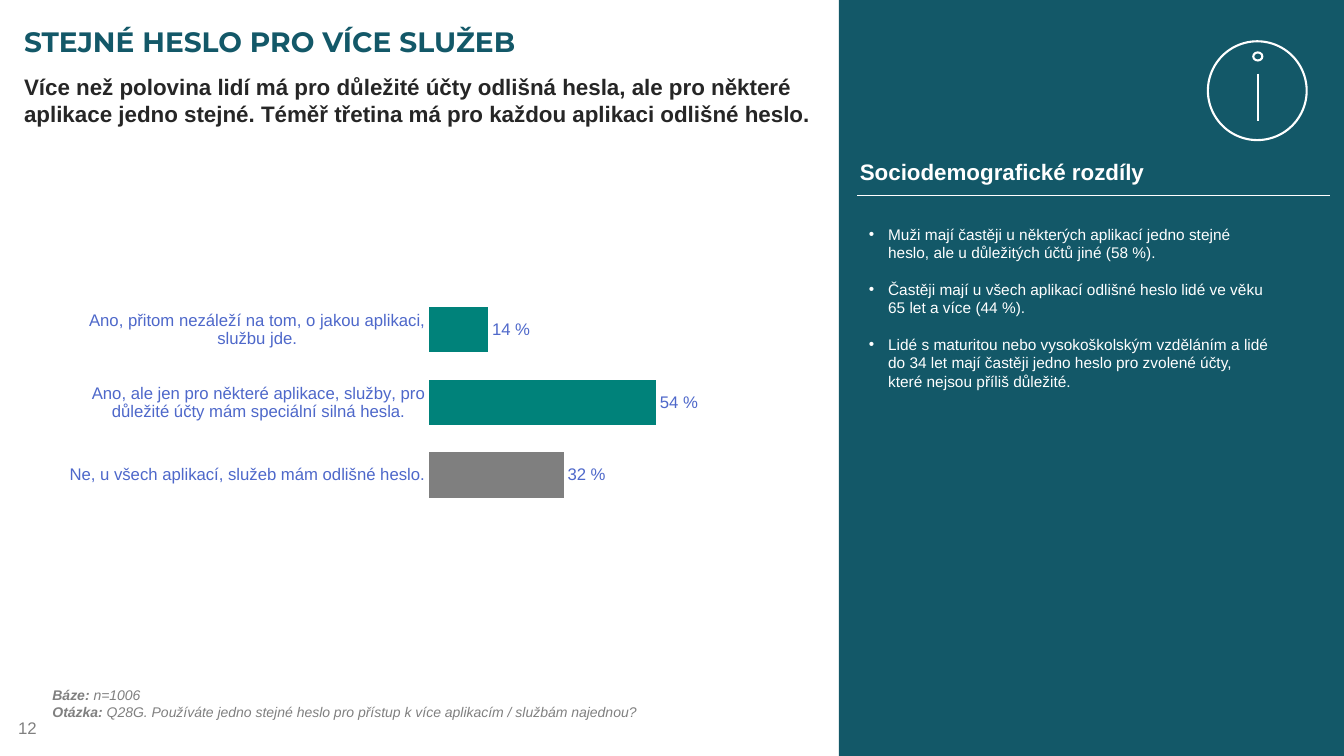
from dataclasses import dataclass
from typing import Any

from lxml.etree import SubElement
from pptx import Presentation
from pptx.chart.data import CategoryChartData
from pptx.dml.color import RGBColor
from pptx.enum.chart import XL_CHART_TYPE, XL_LABEL_POSITION, XL_TICK_MARK
from pptx.enum.shapes import MSO_CONNECTOR, MSO_SHAPE
from pptx.enum.text import MSO_ANCHOR
from pptx.oxml import parse_xml
from pptx.oxml.ns import nsdecls, qn
from pptx.util import Inches, Pt


@dataclass(frozen=True)
class Theme:
    teal: str = "135868"
    white: str = "FFFFFF"
    ink: str = "262626"
    grey: str = "808080"
    label: str = "4E68CA"
    bar: str = "00827A"
    bar_no: str = "7F7F7F"
    body_font: str = "Arial"
    title_font: str = "Montserrat"
    title: int = 20
    heading: int = 16
    small: int = 12
    bullet: int = 11
    note: int = 10


T = Theme()
Box = tuple[float, float, float, float]


@dataclass(frozen=True)
class Run:
    text: str
    bold: bool = False


@dataclass(frozen=True)
class TextBox:
    box: Box
    paragraphs: list[list[Run]]
    size: int
    color: str
    font: str = T.body_font
    italic: bool = False
    wrap: bool = True
    anchor: MSO_ANCHOR = MSO_ANCHOR.TOP
    inset: tuple[float, float] = (0.1, 0.05)
    bullet: bool = False
    gap: int = 0


@dataclass(frozen=True)
class Shape:
    kind: MSO_SHAPE
    box: Box
    fill: str | None = None
    line: str | None = None


@dataclass(frozen=True)
class Line:
    start: tuple[float, float]
    end: tuple[float, float]
    width: float


@dataclass(frozen=True)
class Answer:
    text: str
    percent: int
    color: str


TEXTS = [
    TextBox((0.05, 7.02, 3.11, 0.4), [[Run("12")]], T.small, T.grey,
            anchor=MSO_ANCHOR.MIDDLE, inset=(0.13, 0.07)),
    TextBox((0.14, 0.14, 13.05, 0.53), [[Run("STEJNÉ HESLO PRO VÍCE SLUŽEB", True)]],
            T.title, T.teal, T.title_font, anchor=MSO_ANCHOR.MIDDLE),
    TextBox((0.14, 0.68, 8.18, 0.7), [[Run(
        "Více než polovina lidí má pro důležité účty odlišná hesla, ale pro některé "
        "aplikace jedno stejné. Téměř třetina má pro každou aplikaci odlišné heslo.", True)]],
        T.heading, T.ink),
    TextBox((0.52, 6.81, 11.58, 0.34), [
        [Run("Báze: ", True), Run("n=1006")],
        [Run("Otázka:", True), Run(" Q28G. Používáte jedno stejné heslo pro přístup "
                                   "k více aplikacím / službám najednou?")],
    ], T.note, T.grey, italic=True, inset=(0, 0)),
    TextBox((8.43, 1.52, 3.06, 0.37), [[Run("Sociodemografické rozdíly", True)]],
            T.heading, T.white, wrap=False),
    TextBox((8.52, 2.18, 4.17, 1.77), [
        [Run("Muži mají častěji u některých aplikací jedno stejné heslo, "
             "ale u důležitých účtů jiné (58 %).")],
        [Run("Častěji mají u všech aplikací odlišné heslo lidé ve věku 65 let a více (44 %).")],
        [Run("Lidé s maturitou nebo vysokoškolským vzděláním a lidé do 34 let mají častěji "
             "jedno heslo pro zvolené účty, které nejsou příliš důležité.")],
    ], T.bullet, T.white, bullet=True, gap=13),
]
SHAPES = [
    Shape(MSO_SHAPE.RECTANGLE, (8.32, 0, 5.02, 7.5), fill=T.teal),
    Shape(MSO_SHAPE.OVAL, (11.98, 0.41, 0.98, 0.98), line=T.white),
    Shape(MSO_SHAPE.OVAL, (12.43, 0.52, 0.09, 0.08), line=T.white),
]
LINES = [
    Line((8.5, 1.94), (13.19, 1.94), 0.5),
    Line((12.48, 0.73), (12.48, 1.2), 1.5),
]
ANSWERS = [
    Answer("Ano, přitom nezáleží na tom, o jakou aplikaci, službu jde.", 14, T.bar),
    Answer("Ano, ale jen pro některé aplikace, služby, pro důležité účty mám "
           "speciální silná hesla.", 54, T.bar),
    Answer("Ne, u všech aplikací, služeb mám odlišné heslo.", 32, T.bar_no),
]
CHART_BOX: Box = (0.69, 2.69, 7.73, 2.39)
PLOT_AREA = {"x": 0.459, "y": 0.092, "w": 0.541, "h": 0.906}


def apply(obj: Any, values: dict[str, Any]) -> None:
    for name, value in values.items():
        setattr(obj, name, value)


def style_font(font: Any, size: int, color: str, name: str = T.body_font,
               bold: bool = False, italic: bool = False) -> None:
    apply(font, {"size": Pt(size), "name": name, "bold": bold, "italic": italic})
    font.color.rgb = RGBColor.from_string(color)


def add_text(slide: Any, item: TextBox) -> None:
    tf = slide.shapes.add_textbox(*map(Inches, item.box)).text_frame
    side, top = map(Inches, item.inset)
    apply(tf, {"word_wrap": item.wrap, "vertical_anchor": item.anchor, "margin_left": side,
               "margin_right": side, "margin_top": top, "margin_bottom": top})
    for i, runs in enumerate(item.paragraphs):
        p = tf.paragraphs[0] if i == 0 else tf.add_paragraph()
        if i and item.gap:
            p.space_before = Pt(item.gap)
        if item.bullet:
            pPr = p._p.get_or_add_pPr()
            apply_indent = {"marL": Inches(0.19), "indent": -Inches(0.19)}
            for name, value in apply_indent.items():
                pPr.set(name, str(value))
            SubElement(pPr, qn("a:buFont")).set("typeface", T.body_font)
            SubElement(pPr, qn("a:buChar")).set("char", "•")
        for run in runs:
            r = p.add_run()
            r.text = run.text
            style_font(r.font, item.size, item.color, item.font, run.bold, item.italic)


def add_shape(slide: Any, item: Shape) -> None:
    sp = slide.shapes.add_shape(item.kind, *map(Inches, item.box))
    sp.shadow.inherit = False
    for target, color in ((sp.fill, item.fill), (sp.line.fill, item.line)):
        if color:
            target.solid()
            target.fore_color.rgb = RGBColor.from_string(color)
        else:
            target.background()
    if item.line:
        sp.line.width = Pt(1.5)


def add_line(slide: Any, item: Line) -> None:
    ends = map(Inches, item.start + item.end)
    cxn = slide.shapes.add_connector(MSO_CONNECTOR.STRAIGHT, *ends)
    cxn.line.color.rgb = RGBColor.from_string(T.white)
    cxn.line.width = Pt(item.width)
    SubElement(cxn._element.spPr, qn("a:effectLst"))


def set_plot_area(chart: Any) -> None:
    """Fix the inner plot area as fractions of the chart frame."""
    plot_area = chart._chartSpace.chart.plotArea
    for old in plot_area.findall(qn("c:layout")):
        plot_area.remove(old)
    modes = '<c:xMode val="edge"/><c:yMode val="edge"/>'
    sizes = "".join(f'<c:{k} val="{v}"/>' for k, v in PLOT_AREA.items())
    plot_area.insert(0, parse_xml(
        f'<c:layout {nsdecls("c")}><c:manualLayout><c:layoutTarget val="inner"/>'
        f"{modes}{sizes}</c:manualLayout></c:layout>"))


def add_answers_chart(slide: Any) -> None:
    data = CategoryChartData()
    data.categories = [a.text for a in ANSWERS]
    data.add_series("Series 1", [a.percent for a in ANSWERS])
    chart = slide.shapes.add_chart(
        XL_CHART_TYPE.BAR_CLUSTERED, *map(Inches, CHART_BOX), data).chart
    apply(chart, {"has_legend": False, "has_title": False})
    style_font(chart.font, T.note, T.label)
    set_plot_area(chart)
    cat, val, plot = chart.category_axis, chart.value_axis, chart.plots[0]
    apply(cat, {"reverse_order": True, "major_tick_mark": XL_TICK_MARK.NONE})
    cat.format.line.fill.background()
    style_font(cat.tick_labels.font, T.small, T.label)
    apply(val, {"visible": False, "has_major_gridlines": False,
                "minimum_scale": 0, "maximum_scale": 100})
    apply(plot, {"gap_width": 60, "vary_by_categories": False, "has_data_labels": True})
    apply(plot.data_labels, {"show_value": True, "number_format": '#,##0\\ "%"',
                             "number_format_is_linked": False,
                             "position": XL_LABEL_POSITION.OUTSIDE_END})
    style_font(plot.data_labels.font, T.small, T.label)
    for i, answer in enumerate(ANSWERS):
        fill = plot.series[0].points[i].format.fill
        fill.solid()
        fill.fore_color.rgb = RGBColor.from_string(answer.color)


def main() -> None:
    prs = Presentation()
    apply(prs, {"slide_width": Inches(13.33), "slide_height": Inches(7.5)})
    slide = prs.slides.add_slide(prs.slide_layouts[6])
    for draw, items in ((add_shape, SHAPES), (add_line, LINES), (add_text, TEXTS)):
        for item in items:
            draw(slide, item)
    add_answers_chart(slide)
    prs.save("out.pptx")


if __name__ == "__main__":
    main()
